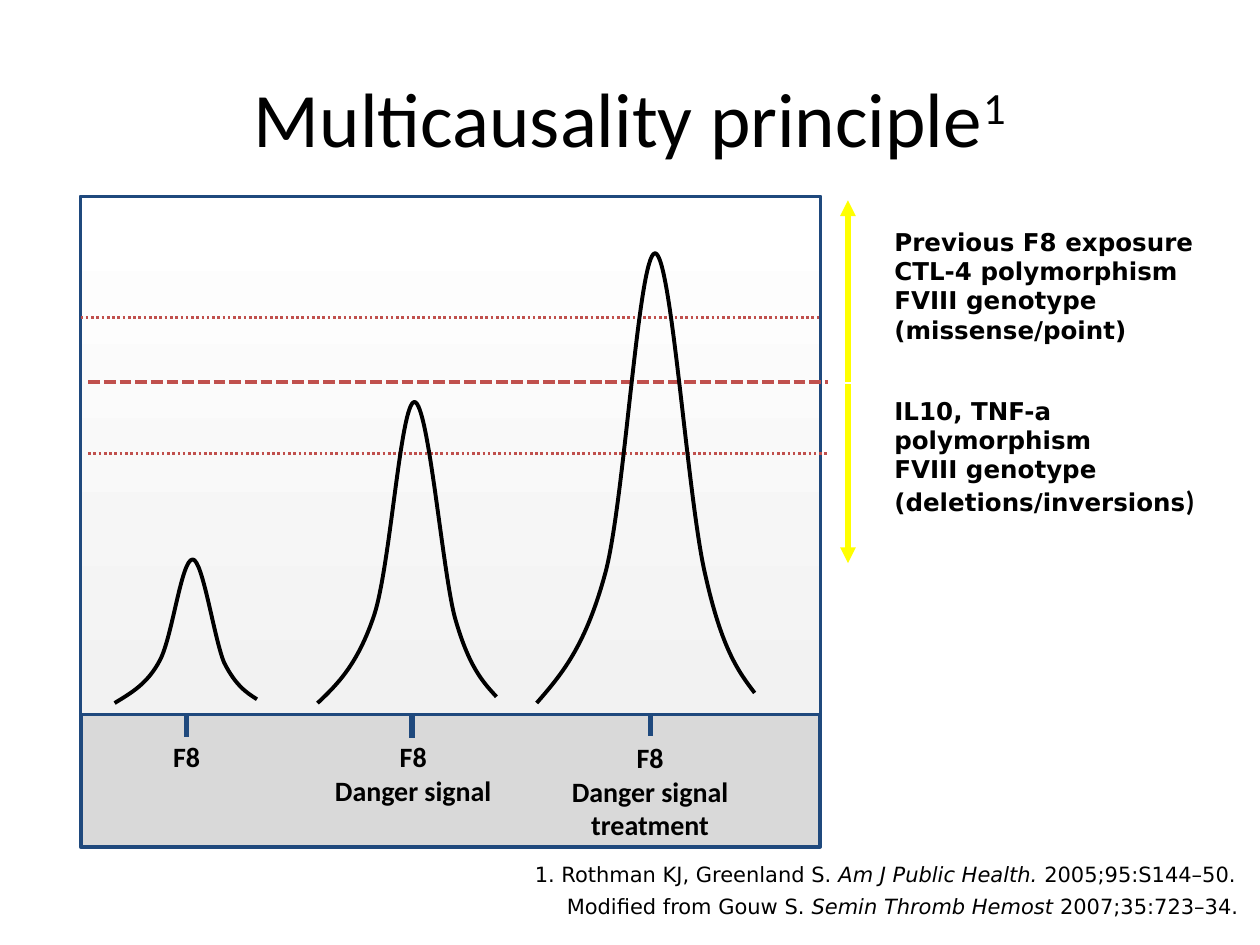
from lxml import etree
from pptx import Presentation
from pptx.dml import color
from pptx.enum import dml, shapes, text
from pptx.oxml import ns
from pptx.util import Inches, Pt

NAVY, RED, BLACK, YELLOW = "1F497D", "C0504D", "000000", "FFFF00"
SANS, BODY = "DejaVu Sans", "Calibri"


def paint(item, code):
    item.rgb = color.RGBColor.from_string(code)


def box(x, y, w, h):
    return [Inches(v) for v in (x, y, w, h)]


def stroke(line, code, width, dash=None):
    line.width = Pt(width)
    paint(line.color, code)
    if dash:
        line.dash_style = dash


def rule(slide, x1, y1, x2, y2, code, width, dash=None, arrow=False):
    line = slide.shapes.add_connector(
        shapes.MSO_CONNECTOR.STRAIGHT, *box(x1, y1, x2, y2))
    stroke(line.line, code, width, dash)
    props = line.element.spPr
    if arrow:
        etree.SubElement(props.find(ns.qn("a:ln")), ns.qn("a:tailEnd"), type="triangle")
    etree.SubElement(props, ns.qn("a:effectLst"))


def words(slide, area, rows, size, face, bold=False, align="LEFT", wrap=False):
    frame = slide.shapes.add_textbox(*box(*area)).text_frame
    frame.word_wrap = wrap
    for n, row in enumerate(rows):
        para = frame.paragraphs[0] if n == 0 else frame.add_paragraph()
        para.alignment = getattr(text.PP_ALIGN, align)
        font = para.font
        font.size, font.name, font.bold = Pt(size), face, bold
        paint(font.color, BLACK)
        for part in [row] if isinstance(row, str) else row:
            para.add_run().text = part
    return frame


def title(slide, area):
    frame = words(slide, area, [("Multicausality principle", "1")],
                  44, BODY, align="CENTER", wrap=True)
    frame.vertical_anchor = text.MSO_ANCHOR.MIDDLE
    mark = frame.paragraphs[0].runs[1].font
    mark.size = Pt(44)
    mark._element.set("baseline", "30000")


def panel(slide, x, y, w, h, width):
    shape = slide.shapes.add_shape(shapes.MSO_SHAPE.RECTANGLE, *box(x, y, w, h))
    shape.shadow.inherit = False
    stroke(shape.line, NAVY, width)
    return shape.fill


def chart(slide, x, y, w, h, plot):
    fill = panel(slide, x, y, w, h, 2.25)
    fill.solid()
    paint(fill.fore_color, "D9D9D9")
    fill = panel(slide, x, y, w, plot, 1.5)
    fill.gradient()
    fill.gradient_angle = 90
    for stop, place, code in zip(fill.gradient_stops, (0, 1), ("F2F2F2", "FFFFFF")):
        stop.position = place
        paint(stop.color, code)
    dot, dash = dml.MSO_LINE.ROUND_DOT, dml.MSO_LINE.SQUARE_DOT
    for dx, dy, width, style in ((0, .96, 1.5, dot), (.06, 1.47, 2.25, dash),
                                 (.06, 2.04, 1.5, dot)):
        rule(slide, x + dx, y + dy, x + dx + w, y + dy, RED, width, style)


def curve(slide, x, y, points):
    spots = [(Inches(x + dx), Inches(y + dy)) for dx, dy in points]
    pen = slide.shapes.build_freeform(*spots[0])
    pen.add_line_segments(spots[1:], close=False)
    shape = pen.convert_to_shape()
    shape.shadow.inherit = False
    shape.fill.background()
    stroke(shape.line, BLACK, 2.25)
    trace = shape.element.find(".//" + ns.qn("a:path"))
    steps = trace.findall(ns.qn("a:lnTo"))
    for n in range(0, len(steps), 3):
        bend = etree.SubElement(trace, ns.qn("a:cubicBezTo"))
        for step in steps[n:n + 3]:
            bend.append(step[0])
            trace.remove(step)


def peak(slide, x, y, points, tick, label, rows):
    curve(slide, x, y, points)
    dx, dy = tick
    rule(slide, x + dx, y + dy, x + dx, y + dy + .18, NAVY, 3)
    dx, dy, w, h = label
    words(slide, (x + dx, y + dy, w, h), rows, 16, BODY, True, "CENTER")


def factor(slide, x, y, w, h, rows, start, end):
    rule(slide, x - .27, y + start, x - .27, y + end, YELLOW, 3, arrow=True)
    return words(slide, (x, y, w, h), rows, 14, SANS, True)


def cite(slide, area, parts):
    frame = words(slide, area, [parts], 12, SANS, align="RIGHT", wrap=True)
    frame.paragraphs[0].runs[1].font.italic = True


def main():
    deck = Presentation()
    deck.slide_width, deck.slide_height = Inches(10), Inches(7.5)
    slide = deck.slides.add_slide(deck.slide_layouts[6])
    title(slide, (.5, .3, 9, 1.25))
    factor(slide, 7, 1.75, 2.58, 1.04,
           ["Previous F8 exposure", "CTL-4 polymorphism", "FVIII genotype",
            "(missense/point)"], 1.28, -.16)
    frame = factor(slide, 7, 3.09, 2.67, 1.08,
                   ["IL10, TNF-a", "polymorphism", "FVIII genotype",
                    ("(deletions/inversions", ")")], -.04, 1.38)
    last = frame.paragraphs[-1].runs[-1].font
    last.size, last.name = Pt(16), BODY
    chart(slide, .64, 1.56, 5.87, 5.16, 4.11)
    peak(slide, .91, 4.44,
         [(0, 1.14), (.13, 1.06), (.26, .99), (.36, .8), (.46, .61), (.53, 0),
          (.62, 0), (.7, 0), (.79, .63), (.87, .82), (.96, 1), (1.05, 1.06),
          (1.13, 1.11)], (.57, 1.23), (.36, 1.38, .42, .37), ["F8"])
    peak(slide, 2.52, 3.19,
         [(0, 2.39), (.16, 2.24), (.32, 2.08), (.45, 1.69), (.58, 1.29), (.66, 0),
          (.77, 0), (.88, .01), (.99, 1.33), (1.09, 1.71), (1.2, 2.1), (1.31, 2.22),
          (1.42, 2.34)], (.75, 2.49), (.03, 2.63, 1.46, .64),
         ["F8", "Danger signal"])
    peak(slide, 4.26, 2.01,
         [(0, 3.57), (.2, 3.34), (.39, 3.12), (.55, 2.52), (.7, 1.93), (.81, 0),
          (.94, 0), (1.07, .01), (1.2, 1.98), (1.34, 2.56), (1.47, 3.14), (1.6, 3.32),
          (1.73, 3.49)], (.9, 3.65), (.17, 3.82, 1.46, .91),
         ["F8", "Danger signal", "treatment"])
    cite(slide, (3.55, 6.79, 6.41, .3),
         ("1. Rothman KJ, Greenland S. ", "Am J Public Health.", " 2005;95:S144–50. "))
    cite(slide, (3.62, 7.04, 6.36, .3),
         ("Modified from Gouw S. ", "Semin Thromb Hemost ", "2007;35:723–34. "))
    deck.save("out.pptx")


if __name__ == "__main__":
    main()
